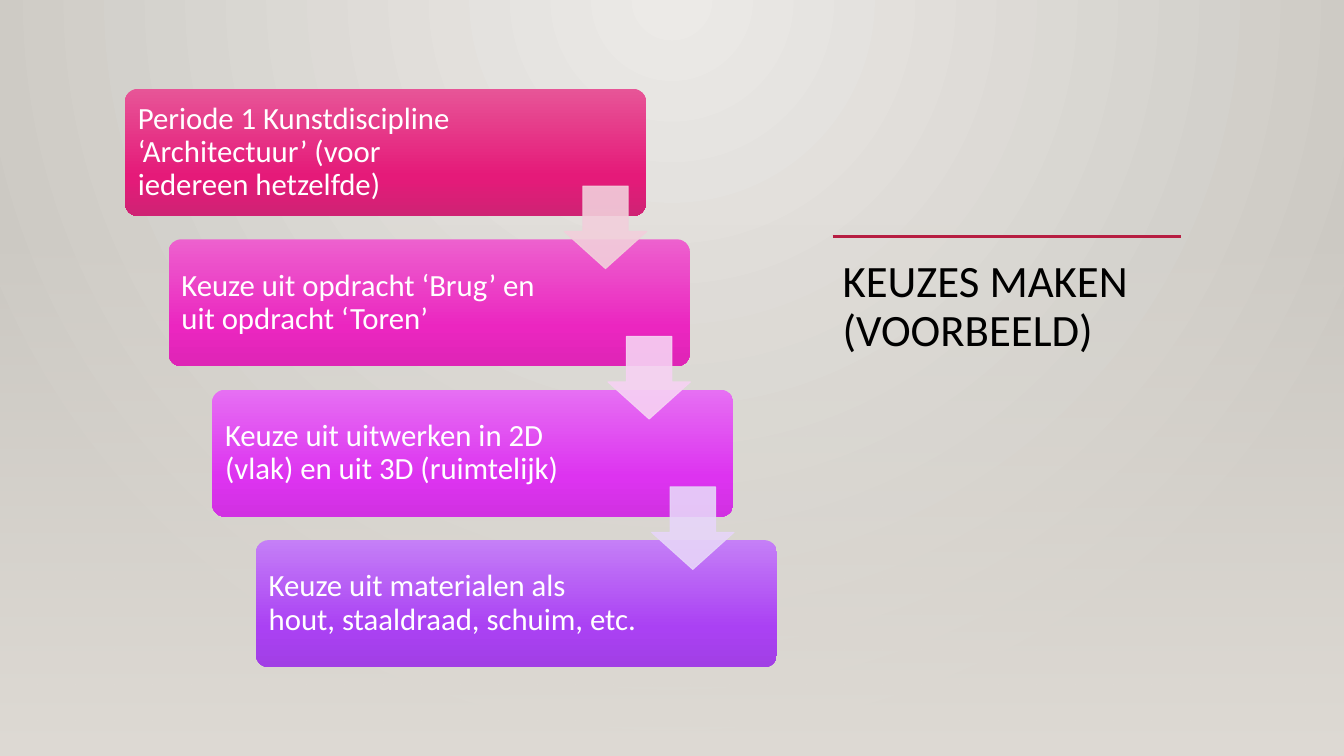
"""Build a slide with four cascading choice steps beside its title."""
import lxml.etree
import pptx
import pptx.dml.color
import pptx.enum.shapes
import pptx.enum.text
import pptx.oxml.ns
import pptx.util

Cm = pptx.util.Cm
Pt = pptx.util.Pt
RGB = pptx.dml.color.RGBColor.from_string
qn = pptx.oxml.ns.qn
SHAPES = pptx.enum.shapes.MSO_SHAPE
ANCHOR = pptx.enum.text.MSO_ANCHOR
ALIGN = pptx.enum.text.PP_ALIGN

THEME = {
    "font": "Calibri",
    "title_size": Pt(32),
    "step_size": Pt(22),
    "title": "000000",
    "step_text": "FFFFFF",
    "rule": "B71E42",
    "backdrop": [(0, "ECEAE7", 100), (100, "CAC7C1", 100)],
    "haze": [(0, "DFDBD5", 0), (100, "DFDBD5", 100)],
    "cards": [
        ("E75597", "E51A79", "CF2374"),
        ("ED61CE", "EB26C0", "DE25B6"),
        ("E66FF3", "DD33F0", "D131E2"),
        ("C57FF7", "AA41F3", "A13FE5"),
    ],
    "arrows": ["F2CFDB", "F6D2F3", "E7D5F9"],
}

STEPS = [
    "Periode 1 Kunstdiscipline ‘Architectuur’ (voor iedereen hetzelfde)",
    "Keuze uit opdracht ‘Brug’ en uit opdracht ‘Toren’",
    "Keuze uit uitwerken in 2D (vlak) en uit 3D (ruimtelijk)",
    "Keuze uit materialen als hout, staaldraad, schuim, etc.",
]
STEP_RIGHT, STEP_DOWN = 1.1, 3.79


def set_gradient(owner, element, stops, radial=False):
    """Fill with (position, colour, opacity) stops, downward or from the top centre."""
    owner.fill.gradient()
    gradient = next(element.iter(qn("a:gradFill")))
    for child in list(gradient):
        gradient.remove(child)
    stop_list = lxml.etree.SubElement(gradient, qn("a:gsLst"))
    for position, colour, opacity in stops:
        stop = lxml.etree.SubElement(stop_list, qn("a:gs"), pos=str(position * 1000))
        tint = lxml.etree.SubElement(stop, qn("a:srgbClr"), val=colour)
        if opacity < 100:
            lxml.etree.SubElement(tint, qn("a:alpha"), val=str(opacity * 1000))
    if radial:
        circle = lxml.etree.SubElement(gradient, qn("a:path"), path="circle")
        lxml.etree.SubElement(circle, qn("a:fillToRect"), l="43000", t="0", r="43000", b="100000")
    else:
        lxml.etree.SubElement(gradient, qn("a:lin"), ang="5400000", scaled="0")


def add_plain_shape(kind, left, top, width, height):
    """Add a shape without shadow or outline, measured in centimetres."""
    shape = slide.shapes.add_shape(kind, Cm(left), Cm(top), Cm(width), Cm(height))
    shape.shadow.inherit = False
    shape.line.fill.background()
    return shape


deck = pptx.Presentation()
deck.slide_width, deck.slide_height = Cm(33.87), Cm(19.05)
slide = deck.slides.add_slide(deck.slide_layouts[5])
set_gradient(slide.background, slide.element, THEME["backdrop"], radial=True)

haze = add_plain_shape(SHAPES.RECTANGLE, 0, 5.61, 33.87, 13.44)
set_gradient(haze, haze.element, THEME["haze"])
slide.shapes.element.insert(2, haze.element)

title = slide.shapes.title
title.left, title.top, title.width, title.height = Cm(20.98), Cm(6.4), Cm(8.77), Cm(10.41)
title.text_frame.text = "KEUZES MAKEN (VOORBEELD)"
title.text_frame.word_wrap = True
title.text_frame.auto_size = pptx.enum.text.MSO_AUTO_SIZE.NONE
title.text_frame.vertical_anchor = ANCHOR.TOP
heading = title.text_frame.paragraphs[0]
heading.alignment = ALIGN.LEFT
heading.line_spacing = 0.9
heading.font.name = THEME["font"]
heading.font.size = THEME["title_size"]
heading.font.color.rgb = RGB(THEME["title"])

title_rule = slide.shapes.add_connector(
    pptx.enum.shapes.MSO_CONNECTOR.STRAIGHT, Cm(20.98), Cm(5.96), Cm(29.77), Cm(5.96))
title_rule.line.color.rgb = RGB(THEME["rule"])
title_rule.line.width = Pt(2.5)
lxml.etree.SubElement(title_rule.element.spPr, qn("a:effectLst"))

for index, (wording, colours) in enumerate(zip(STEPS, THEME["cards"])):
    card = add_plain_shape(SHAPES.ROUNDED_RECTANGLE, 3.15 + index * STEP_RIGHT,
                           2.24 + index * STEP_DOWN, 13.13, 3.2)
    card.adjustments[0] = 0.1
    set_gradient(card, card.element, [(at, colour, 100) for at, colour in zip((0, 69, 100), colours)])
    frame = card.text_frame
    frame.word_wrap = True
    frame.vertical_anchor = ANCHOR.MIDDLE
    frame.margin_left = frame.margin_top = frame.margin_bottom = Cm(0.23)
    frame.margin_right = Cm(3.43 if index else 3.9)
    frame.text = wording
    choice = frame.paragraphs[0]
    choice.alignment = ALIGN.LEFT
    choice.line_spacing = 0.9
    choice.font.name = THEME["font"]
    choice.font.size = THEME["step_size"]
    choice.font.color.rgb = RGB(THEME["step_text"])

for index, colour in enumerate(THEME["arrows"]):
    arrow = add_plain_shape(SHAPES.DOWN_ARROW, 14.22 + index * STEP_RIGHT,
                            4.69 + index * STEP_DOWN, 2.08, 2.08)
    arrow.adjustments[0], arrow.adjustments[1] = 0.55, 0.45
    arrow.fill.solid()
    arrow.fill.fore_color.rgb = RGB(colour)
    arrow.line.color.rgb = RGB(colour)
    arrow.line.width = Pt(0.75)
    for tint in arrow.element.spPr.iter(qn("a:srgbClr")):
        lxml.etree.SubElement(tint, qn("a:alpha"), val="90000")

deck.save("out.pptx")
